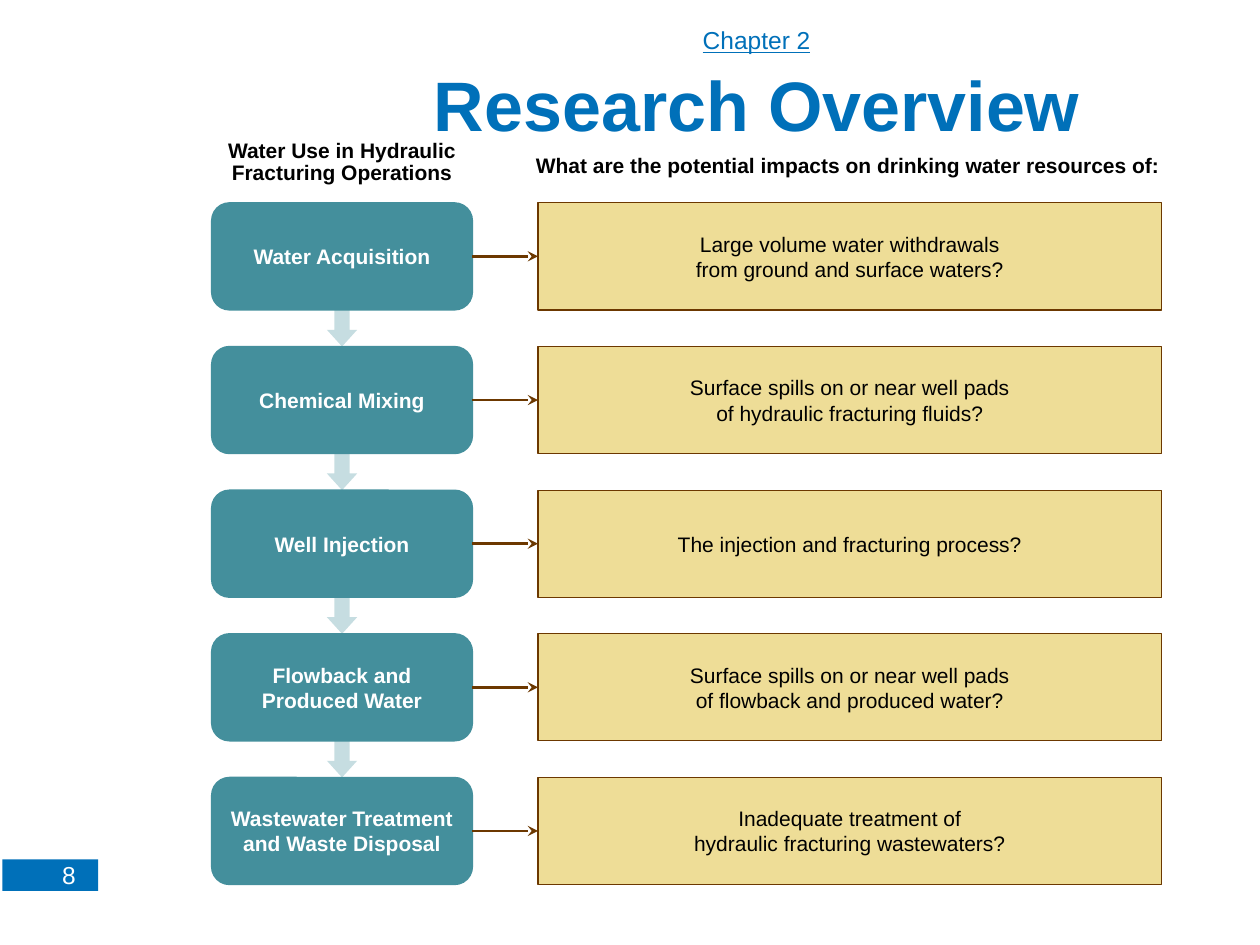
from typing import NamedTuple

from lxml.etree import SubElement
from pptx import Presentation
from pptx.dml.color import RGBColor
from pptx.enum.shapes import MSO_CONNECTOR, MSO_SHAPE
from pptx.enum.text import MSO_ANCHOR, PP_ALIGN
from pptx.oxml.ns import qn
from pptx.util import Inches, Pt

BLUE = RGBColor(0x00, 0x70, 0xB9)
TEAL = RGBColor(0x44, 0x8F, 0x9C)
SAND = RGBColor(0xEA, 0xD5, 0x7D)
BROWN = RGBColor(0x6C, 0x38, 0x00)
WHITE = RGBColor(0xFF, 0xFF, 0xFF)
BLACK = RGBColor(0x00, 0x00, 0x00)

# Flow grid, in inches
TOP, PITCH, HIGH = 1.61, 1.14, 0.85
LEFT, WIDE = 1.68, 2.07
ASK_LEFT, ASK_WIDE = 4.27, 4.95
ARROW = 0.24


class Step(NamedTuple):
    name: str
    ask: str


class Box(NamedTuple):
    left: float
    top: float
    width: float
    height: float


STEPS = [
    Step("Water Acquisition",
         "Large volume water withdrawals\vfrom ground and surface waters?"),
    Step("Chemical Mixing",
         "Surface spills on or near well pads\vof hydraulic fracturing fluids?"),
    Step("Well Injection", "The injection and fracturing process?"),
    Step("Flowback and\vProduced Water",
         "Surface spills on or near well pads\vof flowback and produced water?"),
    Step("Wastewater Treatment and Waste Disposal",
         "Inadequate treatment of\vhydraulic fracturing wastewaters?"),
]


def style(para, size: int, color: RGBColor, bold: bool = False,
          align=PP_ALIGN.CENTER) -> None:
    para.alignment = align
    font = para.font
    font.name, font.size, font.bold = "Arial", Pt(size), bold
    font.color.rgb = color


def add_box(slide, kind, box: Box, fill: RGBColor, alpha: int = 100,
            line: RGBColor | None = None):
    shape = slide.shapes.add_shape(kind, *map(Inches, box))
    shape.shadow.inherit = False
    shape.fill.solid()
    shape.fill.fore_color.rgb = fill
    if alpha < 100:
        tint = shape.fill._xPr.find(f".//{qn('a:srgbClr')}")
        SubElement(tint, qn("a:alpha"), val=str(alpha * 1000))
    if line is None:
        shape.line.fill.background()
    else:
        shape.line.color.rgb = line
        shape.line.width = Pt(0.75)
    return shape


def add_label(shape, text: str, color: RGBColor, bold: bool = False) -> None:
    frame = shape.text_frame
    frame.word_wrap = True
    frame.vertical_anchor = MSO_ANCHOR.MIDDLE
    frame.text = text
    style(frame.paragraphs[0], 12, color, bold)


def add_text(slide, box: Box, text: str):
    frame = slide.shapes.add_textbox(*map(Inches, box)).text_frame
    frame.word_wrap = True
    frame.text = text
    return frame


def add_head(slide, box: Box, text: str) -> None:
    for para in add_text(slide, box, text).paragraphs:
        style(para, 12, BLACK, True)
        para.line_spacing = 0.88


def add_link(slide, start, end) -> None:
    link = slide.shapes.add_connector(MSO_CONNECTOR.STRAIGHT, 0, 0, 0, 0)
    link.begin_connect(start, 3)
    link.end_connect(end, 1)
    link.line.color.rgb = BROWN
    link.line.width = Pt(1.5)
    SubElement(link.line._get_or_add_ln(), qn("a:tailEnd"), type="stealth")
    SubElement(link._element.spPr, qn("a:effectLst"))


def add_step(slide, step: Step, top: float):
    name = add_box(slide, MSO_SHAPE.FLOWCHART_ALTERNATE_PROCESS,
                   Box(LEFT, top, WIDE, HIGH), TEAL, line=TEAL)
    add_label(name, step.name, WHITE, True)
    ask = add_box(slide, MSO_SHAPE.RECTANGLE,
                  Box(ASK_LEFT, top, ASK_WIDE, HIGH), SAND, 80, BROWN)
    add_label(ask, step.ask, BLACK)
    add_link(slide, name, ask)


def add_arrow(slide, top: float) -> None:
    left = LEFT + (WIDE - ARROW) / 2
    arrow = add_box(slide, MSO_SHAPE.DOWN_ARROW,
                    Box(left, top, ARROW, PITCH - HIGH), TEAL, 30)
    arrow.adjustments[0] = 0.5
    arrow.adjustments[1] = 0.55


def main() -> None:
    deck = Presentation()
    deck.slide_width, deck.slide_height = Inches(10), Inches(7.5)
    slide = deck.slides.add_slide(deck.slide_layouts[6])

    # Page number
    add_box(slide, MSO_SHAPE.RECTANGLE, Box(0.02, 6.82, 0.76, 0.25), BLUE)
    page = add_text(slide, Box(0, 6.78, 0.7, 0.28), "8")
    style(page.paragraphs[0], 14, WHITE, align=PP_ALIGN.RIGHT)

    # Flow of steps and questions
    for row, step in enumerate(STEPS):
        top = TOP + row * PITCH
        add_step(slide, step, top)
        if row < len(STEPS) - 1:
            add_arrow(slide, top + HIGH)

    # Column heads
    add_head(slide, Box(LEFT, 1.07, WIDE, 0.52),
             "Water Use in Hydraulic\nFracturing Operations")
    add_head(slide, Box(4.05, 1.19, 5.36, 0.31),
             "What are the potential impacts on drinking water resources of:")

    # Title
    title = add_text(slide, Box(2.47, 0.13, 7.07, 1.01),
                     "Chapter 2\nResearch Overview")
    title.margin_top = Inches(0.07)
    chapter, topic = title.paragraphs
    style(chapter, 14, BLUE)
    chapter.font.underline = True
    style(topic, 40, BLUE, True)
    topic.space_before = Pt(4)

    deck.save("out.pptx")


if __name__ == "__main__":
    main()
